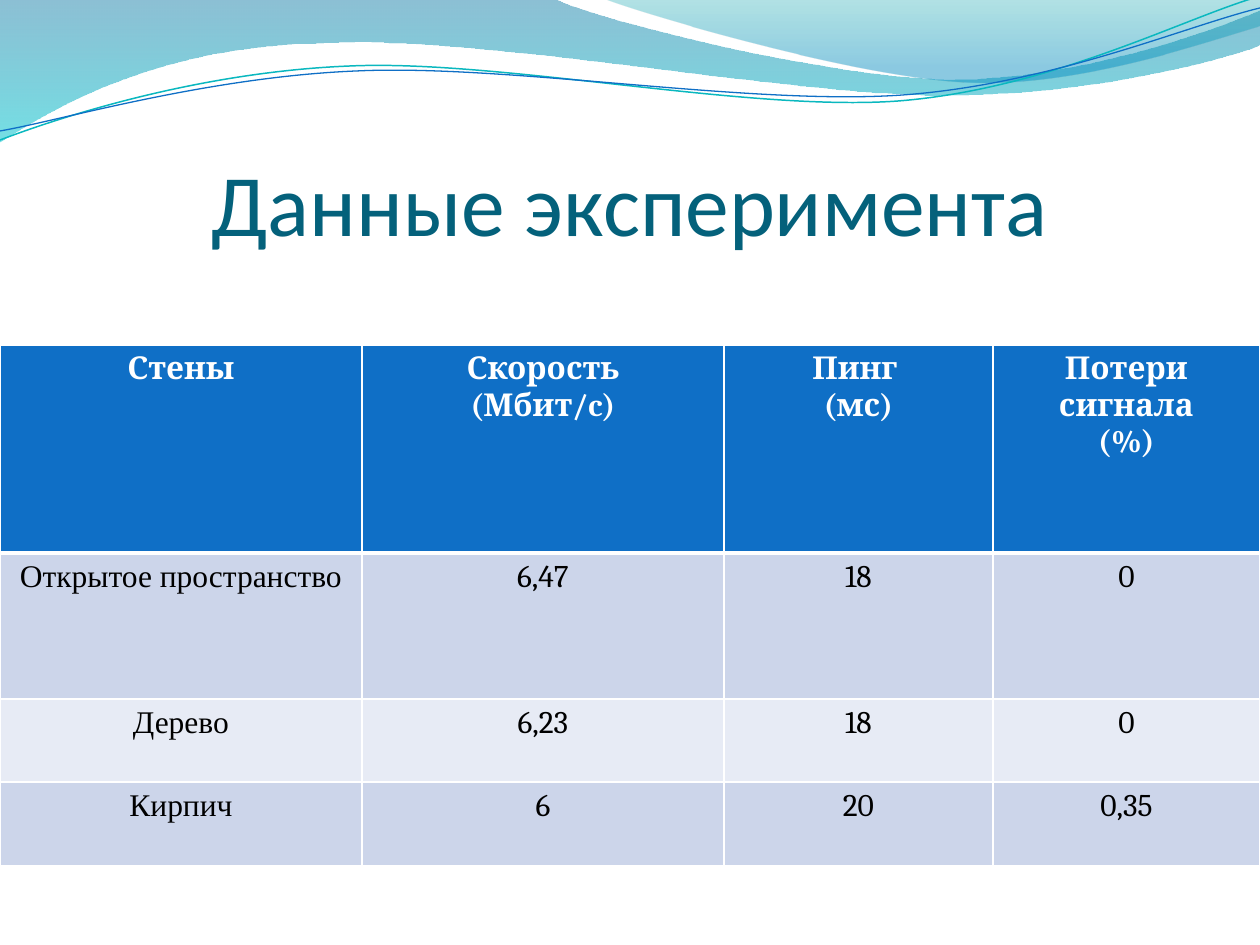
from lxml import etree
from pptx import Presentation
from pptx.dml.color import RGBColor
from pptx.enum.text import MSO_ANCHOR, PP_ALIGN
from pptx.oxml.ns import qn
from pptx.util import Pt

PX = 914400 / 126
CENTER = PP_ALIGN.CENTER
BOTTOM = MSO_ANCHOR.BOTTOM
TITLE_ONLY = 5

WHITE = RGBColor(0xFF, 0xFF, 0xFF)
BLACK = RGBColor(0x00, 0x00, 0x00)
TITLE_TEAL = RGBColor(0x04, 0x61, 0x7B)
BLUE = RGBColor(0x0F, 0x6F, 0xC6)
TURQUOISE = RGBColor(0x0A, 0xB8, 0xBF)
DEEP_BLUE = RGBColor(0x00, 0x74, 0xA1)
CYAN = RGBColor(0x00, 0xC6, 0xCF)
SEA_GREEN = RGBColor(0x00, 0xA1, 0xA9)
SKY_BLUE = RGBColor(0x00, 0x8B, 0xBF)
ROW_DARK = RGBColor(0xCC, 0xD5, 0xEA)
ROW_LIGHT = RGBColor(0xE7, 0xEB, 0xF5)

# Each outline step is a line end (2 numbers) or a Bezier curve (6 numbers)
LEFT_BAND = [(0, 0), (554, -1), (600, 21, 837, 79, 955, 79),
             (1075, 79, 1207, 33, 1260, 11), (1261, 45),
             (1239, 55, 1096, 96, 940, 95), (784, 95, 481, 35, 324, 43),
             (163, 45, 58, 105, -1, 142)]
RIGHT_BAND = [(604, -1), (641, 14, 859, 78, 969, 82),
              (1079, 87, 1211, 40, 1260, 26), (1260, 0)]
UPPER_WAVE = [(0, 140), (60, 117, 199, 72, 349, 66),
              (498, 59, 747, 112, 898, 101), (1050, 89, 1182, 19, 1257, -3)]
LOWER_WAVE = [(0, 131), (59, 121, 207, 77, 357, 71),
              (508, 64, 752, 106, 903, 95), (1053, 84, 1186, 26, 1260, 8)]

COLUMNS = [362, 362, 269, 267]
ROWS = [208, 146, 83, 84]
CELLS = [
    ["Стены", "Скорость\n(Мбит/c)", "Пинг \n(мс)", "Потери сигнала\n(%)"],
    ["Открытое пространство", "6,47", "18", "0"],
    ["Дерево", "6,23", "18", "0"],
    ["Кирпич", "6", "20", "0,35"],
]


def emu(px):
    return round(px * PX)


class SlidePainter:
    def __init__(self, page):
        self.page = page

    def outline(self, steps, close):
        ends = [(emu(step[-2]), emu(step[-1])) for step in steps]
        builder = self.page.shapes.build_freeform(*ends[0], scale=1.0)
        builder.add_line_segments(ends[1:], close=close)
        shape = builder.convert_to_shape()
        shape.shadow.inherit = False
        # Bend the segments that have control points
        segments = list(shape.element.iter(qn("a:lnTo")))
        for segment, step in zip(segments, steps[1:]):
            if len(step) == 6:
                segment.tag = qn("a:cubicBezTo")
                for i in (0, 1):
                    x, y = emu(step[2 * i]) - shape.left, emu(step[2 * i + 1]) - shape.top
                    point = etree.Element(qn("a:pt"), x=str(x), y=str(y))
                    segment.insert(i, point)
        return shape

    def band(self, steps, stops):
        shape = self.outline(steps, close=True)
        shape.line.fill.background()
        shape.fill.gradient()
        shape.fill.gradient_angle = 270
        for stop, (position, color, opacity) in zip(shape.fill.gradient_stops, stops):
            stop.position = position
            stop.color.rgb = color
        for node, (position, color, opacity) in zip(shape.element.iter(qn("a:srgbClr")), stops):
            etree.SubElement(node, qn("a:alpha"), val=str(opacity * 1000))

    def wave(self, steps, color, width):
        shape = self.outline(steps, close=False)
        shape.fill.background()
        shape.line.color.rgb = color
        shape.line.width = Pt(width)

    def format_text(self, frame, font, size, color, bold=False):
        for para in frame.paragraphs:
            para.alignment = CENTER
            for span in para.runs:
                span.font.name = font
                span.font.size = Pt(size)
                span.font.bold = bold
                span.font.color.rgb = color

    def title(self, text, left, top, width, height):
        box = self.page.shapes.title
        box.left, box.top, box.width, box.height = map(emu, (left, top, width, height))
        frame = box.text_frame
        frame.text = text
        frame.word_wrap = True
        frame.vertical_anchor = BOTTOM
        frame.margin_left = frame.margin_right = frame.margin_bottom = 0
        self.format_text(frame, "Calibri", 50, TITLE_TEAL)

    def borders(self, cell, **widths):
        properties = cell._tc.get_or_add_tcPr()
        for side, width in widths.items():
            line = etree.SubElement(properties, qn("a:ln" + side), w=str(Pt(width)))
            fill = etree.SubElement(line, qn("a:solidFill"))
            etree.SubElement(fill, qn("a:srgbClr"), val=str(WHITE))

    def table(self, left, top, columns, rows, cells):
        frame = self.page.shapes.add_table(
            len(rows), len(columns), emu(left), emu(top), emu(sum(columns)), emu(sum(rows)))
        grid = frame.table
        for column, width in zip(grid.columns, columns):
            column.width = emu(width)
        for r, height in enumerate(rows):
            grid.rows[r].height = emu(height)
            header = r == 0
            fill = BLUE if header else ROW_DARK if r % 2 else ROW_LIGHT
            for c, text in enumerate(cells[r]):
                cell = grid.cell(r, c)
                cell.text_frame.text = text
                font = "Times New Roman" if c == 0 and not header else "Cambria"
                self.format_text(cell.text_frame, font, 18, WHITE if header else BLACK, header)
                self.borders(cell, L=1, R=1, T=3 if r == 1 else 1, B=3 if header else 1)
                cell.fill.solid()
                cell.fill.fore_color.rgb = fill


def main():
    deck = Presentation()
    deck.slide_width, deck.slide_height = emu(1260), emu(945)
    painter = SlidePainter(deck.slides.add_slide(deck.slide_layouts[TITLE_ONLY]))

    # Decorative header
    painter.band(LEFT_BAND, [(0, DEEP_BLUE, 45), (1, CYAN, 55)])
    painter.band(RIGHT_BAND, [(0, SEA_GREEN, 30), (0.8, SKY_BLUE, 45)])
    painter.wave(UPPER_WAVE, TURQUOISE, 0.85)
    painter.wave(LOWER_WAVE, BLUE, 0.75)

    # Title and measurements
    painter.title("Данные эксперимента", 63, 97, 1134, 157)
    painter.table(0, 345, COLUMNS, ROWS, CELLS)

    deck.save("out.pptx")


if __name__ == "__main__":
    main()
